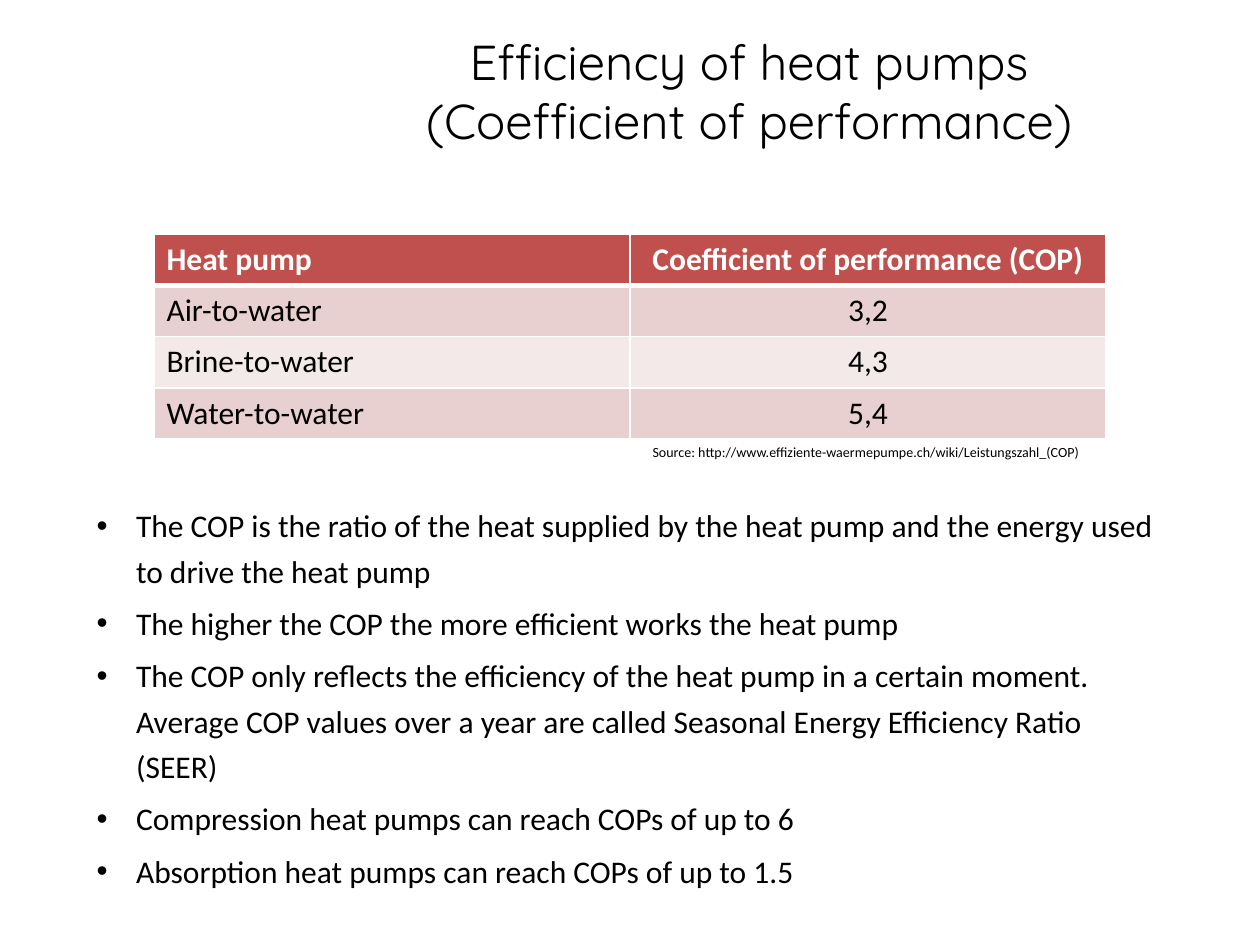
from pptx import Presentation
from pptx.dml.color import RGBColor
from pptx.enum.text import MSO_ANCHOR, PP_ALIGN
from pptx.oxml import parse_xml
from pptx.oxml.ns import nsdecls
from pptx.util import Pt

TITLE = "Efficiency of heat pumps\v(Coefficient of performance)"
ROWS = [
    ("Heat pump", "Coefficient of performance (COP)"),
    ("Air-to-water", "3,2"),
    ("Brine-to-water", "4,3"),
    ("Water-to-water", "5,4"),
]
BULLETS = [
    "The COP is the ratio of the heat supplied by the heat pump and the energy used "
    "to drive the heat pump",
    "The higher the COP the more efficient works the heat pump",
    "The COP only reflects the efficiency of the heat pump in a certain moment. "
    "Average COP values over a year are called Seasonal Energy Efficiency Ratio (SEER)",
    "Compression heat pumps can reach COPs of up to 6",
    "Absorption heat pumps can reach COPs of up to 1.5",
]
SOURCE = "Source: http://www.effiziente-waermepumpe.ch/wiki/Leistungszahl_(COP)"

THEME = {
    "title_font": "Quicksand", "body_font": "Calibri",
    "title_size": 28, "body_size": 18, "source_size": 8,
    "text": "000000", "light": "FFFFFF",
    "header_fill": "C0504D", "band_fills": ("E8D0D0", "F4E9E9"),
}
TITLE_AREA = (190, 15, 476, 73)
TABLE_AREA = (88, 134, 544, 116.6)
BULLET_AREA = (48.2, 281.5, 623.5, 234)
SOURCE_AREA = (365.8, 249.8, 266.4, 17.3)
BULLET_INDENT = 22.5


def points(area):
    return [Pt(length) for length in area]


def style(paragraph, size, color=THEME["text"], font=THEME["body_font"], bold=False):
    paragraph.font.name = font
    paragraph.font.size = Pt(size)
    paragraph.font.bold = bold
    paragraph.font.color.rgb = RGBColor.from_string(color)


def set_borders(cell, widths):
    """Add cell borders; widths are left, right, top, bottom in points."""
    properties = cell._tc.get_or_add_tcPr()
    for index, (side, width) in enumerate(zip("LRTB", widths)):
        properties.insert(index, parse_xml(
            f'<a:ln{side} {nsdecls("a")} w="{Pt(width)}"><a:solidFill>'
            f'<a:srgbClr val="{THEME["light"]}"/></a:solidFill></a:ln{side}>'))


def add_title(page):
    title = page.shapes.title
    title.left, title.top, title.width, title.height = points(TITLE_AREA)
    title.text_frame.text = TITLE
    title.text_frame.vertical_anchor = MSO_ANCHOR.MIDDLE
    paragraph = title.text_frame.paragraphs[0]
    paragraph.alignment = PP_ALIGN.CENTER
    style(paragraph, THEME["title_size"], font=THEME["title_font"])


def add_cop_table(page):
    table = page.shapes.add_table(len(ROWS), len(ROWS[0]), *points(TABLE_AREA)).table
    for row_index, row in enumerate(ROWS):
        header = row_index == 0
        fill = THEME["header_fill"] if header else THEME["band_fills"][(row_index - 1) % 2]
        for column_index, text in enumerate(row):
            cell = table.cell(row_index, column_index)
            cell.text = text
            cell.fill.solid()
            cell.fill.fore_color.rgb = RGBColor.from_string(fill)
            set_borders(cell, (1, 1, 3 if row_index == 1 else 1, 3 if header else 1))
            paragraph = cell.text_frame.paragraphs[0]
            paragraph.alignment = PP_ALIGN.CENTER if column_index else PP_ALIGN.LEFT
            style(paragraph, THEME["body_size"],
                  THEME["light"] if header else THEME["text"], bold=header)


def add_text(page, area, lines, size):
    frame = page.shapes.add_textbox(*points(area)).text_frame
    frame.word_wrap = True
    frame.text = "\n".join(lines)
    for paragraph in frame.paragraphs:
        style(paragraph, size)
    return frame


def add_bullets(page):
    frame = add_text(page, BULLET_AREA, BULLETS, THEME["body_size"])
    for paragraph in frame.paragraphs:
        paragraph.line_spacing = 1.2
        paragraph.space_after = Pt(4)
        properties = paragraph._p.get_or_add_pPr()
        properties.set("marL", str(Pt(BULLET_INDENT)))
        properties.set("indent", str(-Pt(BULLET_INDENT)))
        bullet_font = parse_xml(f'<a:buFont {nsdecls("a")} typeface="Arial"/>')
        bullet = parse_xml(f'<a:buChar {nsdecls("a")} char="•"/>')
        defaults = properties.find("{*}defRPr")
        defaults.addprevious(bullet_font)
        defaults.addprevious(bullet)


def main():
    deck = Presentation()
    deck.slide_width, deck.slide_height = Pt(720), Pt(540)
    page = deck.slides.add_slide(deck.slide_layouts[5])
    add_title(page)
    add_cop_table(page)
    add_bullets(page)
    add_text(page, SOURCE_AREA, [SOURCE], THEME["source_size"])
    deck.save("out.pptx")


if __name__ == "__main__":
    main()
